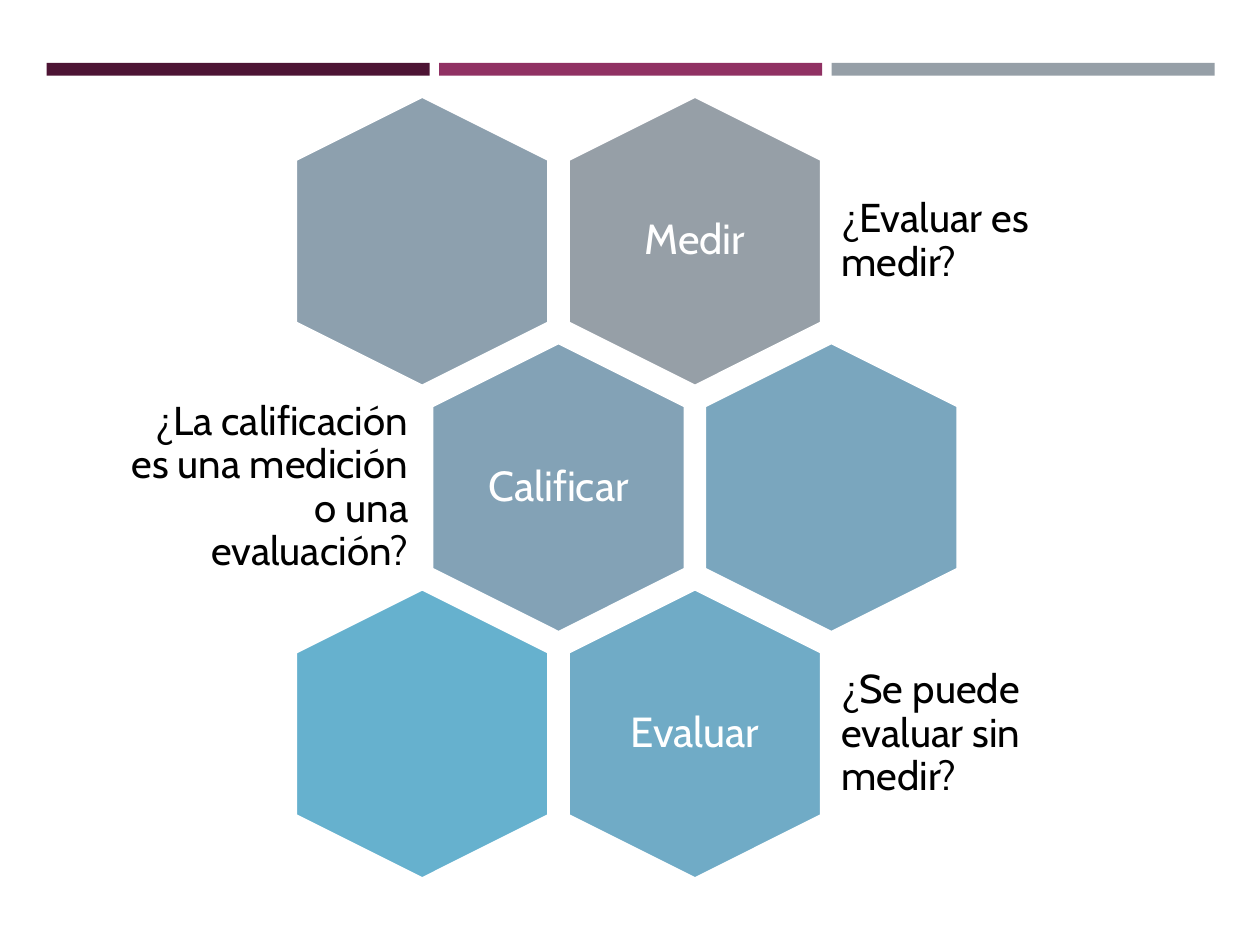
from dataclasses import dataclass

from pptx import Presentation
from pptx.dml.color import RGBColor
from pptx.enum.shapes import MSO_SHAPE
from pptx.enum.text import MSO_ANCHOR, PP_ALIGN
from pptx.util import Inches, Pt

RECT, HEXAGON = MSO_SHAPE.RECTANGLE, MSO_SHAPE.HEXAGON
LEFT, CENTER, RIGHT = PP_ALIGN.LEFT, PP_ALIGN.CENTER, PP_ALIGN.RIGHT
MIDDLE = MSO_ANCHOR.MIDDLE

FONT = "Cabin"
WHITE, BLACK = "FFFFFF", "000000"

BAR_COLORS = ["4D1434", "903163", "969FA7"]
BAR_LEFT, BAR_TOP, BAR_W, BAR_H, BAR_STEP = 0.37, 0.5, 3.04, 0.1, 3.115

# Centre of the first hexagon, and the distance between columns and rows
FIRST_X, FIRST_Y = 3.35, 1.915
COL_STEP, ROW_STEP = 2.165, 1.955
HEX_W, HEX_H = 2.3, 2.01
LABEL_W, LABEL_H = 1.38, 1.59
QUESTION_H = 1.38


@dataclass
class Hexagon:
    col: float
    row: int
    color: str
    label: str = ""


@dataclass
class Question:
    row: int
    left: float
    width: float
    align: PP_ALIGN
    text: str


HEXAGONS = [
    Hexagon(1, 0, "969FA7", "Medir"),
    Hexagon(0, 0, "8DA0AE"),
    Hexagon(0.5, 1, "83A2B6", "Calificar"),
    Hexagon(1.5, 1, "7AA6BE"),
    Hexagon(1, 2, "70ABC6", "Evaluar"),
    Hexagon(0, 2, "66B1CE"),
]
QUESTIONS = [
    Question(0, 6.58, 2.57, LEFT, "¿Evaluar es medir?"),
    Question(1, 0.85, 2.49, RIGHT,
             "¿La calificación es una medición o una evaluación?"),
    Question(2, 6.58, 2.57, LEFT, "¿Se puede evaluar sin medir?"),
]


def rgb(color: str) -> RGBColor:
    return RGBColor.from_string(color)


def row_y(row: int) -> float:
    """Return the vertical centre of a row of hexagons."""
    return FIRST_Y + row * ROW_STEP


def add_filled(s, kind, left: float, top: float, width: float, height: float,
               color: str):
    sp = s.shapes.add_shape(kind, Inches(left), Inches(top),
                            Inches(width), Inches(height))
    sp.shadow.inherit = False
    sp.fill.solid()
    sp.fill.fore_color.rgb = rgb(color)
    sp.line.fill.background()
    return sp


def add_text(s, left: float, center_y: float, width: float, height: float,
             text: str, size: float, color: str, align: PP_ALIGN) -> None:
    sp = s.shapes.add_textbox(Inches(left), Inches(center_y - height / 2),
                              Inches(width), Inches(height))
    tf = sp.text_frame
    tf.word_wrap = True
    tf.vertical_anchor = MIDDLE
    tf.margin_left = tf.margin_right = Inches(0.1)
    tf.margin_top = tf.margin_bottom = Inches(0.1)
    p = tf.paragraphs[0]
    p.text = text
    p.alignment = align
    p.line_spacing = 0.9
    p.font.name = FONT
    p.font.size = Pt(size)
    p.font.color.rgb = rgb(color)


def add_hexagon(s, h: Hexagon) -> None:
    x, y = FIRST_X + h.col * COL_STEP, row_y(h.row)
    sp = add_filled(s, HEXAGON, x - HEX_W / 2, y - HEX_H / 2,
                    HEX_W, HEX_H, h.color)
    sp.adjustments[0] = 0.25
    sp.rotation = 90
    sp.line.color.rgb = rgb(WHITE)
    sp.line.width = Pt(1.75)
    if h.label:
        add_text(s, x - LABEL_W / 2, y, LABEL_W, LABEL_H,
                 h.label, 24, WHITE, CENTER)


def main() -> None:
    prs = Presentation()
    prs.slide_width, prs.slide_height = Inches(10), Inches(7.5)
    s = prs.slides.add_slide(prs.slide_layouts[6])
    for i, color in enumerate(BAR_COLORS):
        add_filled(s, RECT, BAR_LEFT + i * BAR_STEP, BAR_TOP,
                   BAR_W, BAR_H, color)
    for h in HEXAGONS:
        add_hexagon(s, h)
    for q in QUESTIONS:
        add_text(s, q.left, row_y(q.row), q.width, QUESTION_H,
                 q.text, 23, BLACK, q.align)
    prs.save("out.pptx")


if __name__ == "__main__":
    main()
